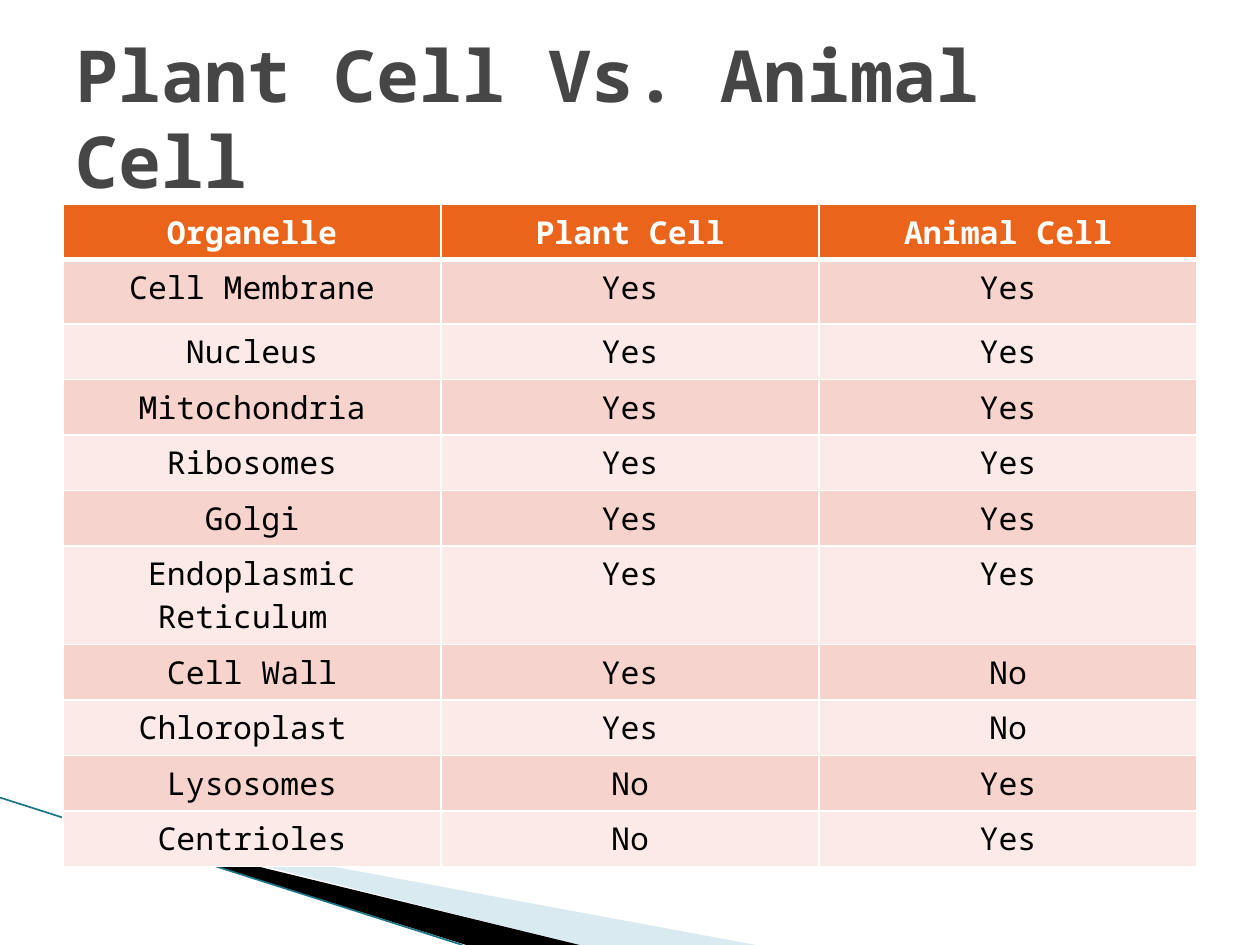
from lxml import etree
from pptx import Presentation
from pptx.dml.color import RGBColor
from pptx.enum.shapes import MSO_CONNECTOR
from pptx.enum.text import MSO_ANCHOR, PP_ALIGN
from pptx.oxml.ns import qn
from pptx.util import Inches, Pt

FONT = "Noto Sans Mono"
COLORS = {
    "title": "464646", "header": "EB641B", "odd": "F7D3CD", "even": "FBEAE8",
    "white": "FFFFFF", "text": "000000", "wedge": "A0CBDC", "line": "1B7587",
}
COLS, ROWS = 100, 75  # slide grid
U = Inches(10) // COLS


def rgb(name):
    return RGBColor.from_string(COLORS[name])


def write(tf, text, align, **fmt):
    p = tf.paragraphs[0]
    p.alignment = align
    r = p.add_run()
    r.text = text
    color = fmt.pop("color")
    for key, value in {"name": FONT, **fmt}.items():
        setattr(r.font, key, value)
    r.font.color.rgb = rgb(color)


prs = Presentation()
prs.slide_width, prs.slide_height = COLS * U, ROWS * U
s = prs.slides.add_slide(prs.slide_layouts[6])

# Corner wedges, in grid units
wedges = [
    ("wedge", 40, [(5.5, 65.1), (59.5, 75), (45.6, 75), (5.5, 65)]),
    ("text", 100, [(5.3, 64.9), (45.7, 75), (37.2, 75), (5.4, 65)]),
]
for color, opacity, points in wedges:
    fb = s.shapes.build_freeform(*points[0], scale=U)
    fb.add_line_segments(points[1:], close=True)
    sp = fb.convert_to_shape()
    sp.shadow.inherit = False
    sp.fill.solid()
    sp.fill.fore_color.rgb = rgb(color)
    sp.line.fill.background()
    if opacity < 100:
        clr = sp.fill._xPr.find(".//" + qn("a:srgbClr"))
        etree.SubElement(clr, qn("a:alpha"), val=str(opacity * 1000))

# Corner line
line = s.shapes.add_connector(
    MSO_CONNECTOR.STRAIGHT, 0, int(63.3 * U), int(36.7 * U), ROWS * U)
line.line.color.rgb = rgb("line")
line.line.width = Pt(0.95)
etree.SubElement(line._element.spPr, qn("a:effectLst"))

# Organelle table
organelles = [
    ("Organelle", "Plant Cell", "Animal Cell"),
    ("Cell Membrane", "Yes", "Yes"),
    ("Nucleus", "Yes", "Yes"),
    ("Mitochondria", "Yes", "Yes"),
    ("Ribosomes", "Yes", "Yes"),
    ("Golgi", "Yes", "Yes"),
    ("Endoplasmic Reticulum ", "Yes", "Yes"),
    ("Cell Wall", "Yes", "No"),
    ("Chloroplast ", "Yes", "No"),
    ("Lysosomes", "No", "Yes"),
    ("Centrioles", "No", "Yes"),
]
table = s.shapes.add_table(len(organelles), 3, 5 * U, int(16.2 * U),
                           90 * U, int(46 * U)).table
for i, values in enumerate(organelles):
    table.rows[i].height = int((5.1 if i == 1 else 4.1) * U)
    head = i == 0
    for j, value in enumerate(values):
        cell = table.cell(i, j)
        write(cell.text_frame, value, PP_ALIGN.CENTER, size=Pt(18),
              bold=head, color="white" if head else "text")
        # Borders come before the fill in the cell properties
        tcPr = cell._tc.get_or_add_tcPr()
        for side in "LRTB":
            thick = (head and side == "B") or (i == 1 and side == "T")
            ln = etree.SubElement(tcPr, qn("a:ln" + side),
                                  w=str(Pt(3 if thick else 1)))
            fill = etree.SubElement(ln, qn("a:solidFill"))
            etree.SubElement(fill, qn("a:srgbClr"), val=COLORS["white"])
        cell.fill.solid()
        cell.fill.fore_color.rgb = rgb(
            "header" if head else "odd" if i % 2 else "even")

# Title
tf = s.shapes.add_textbox(5 * U, 3 * U, 90 * U, int(12.5 * U)).text_frame
tf.word_wrap = True
tf.vertical_anchor = MSO_ANCHOR.MIDDLE
write(tf, "Plant Cell Vs. Animal Cell", PP_ALIGN.LEFT,
      size=Pt(41), bold=True, color="title")

prs.save("out.pptx")
